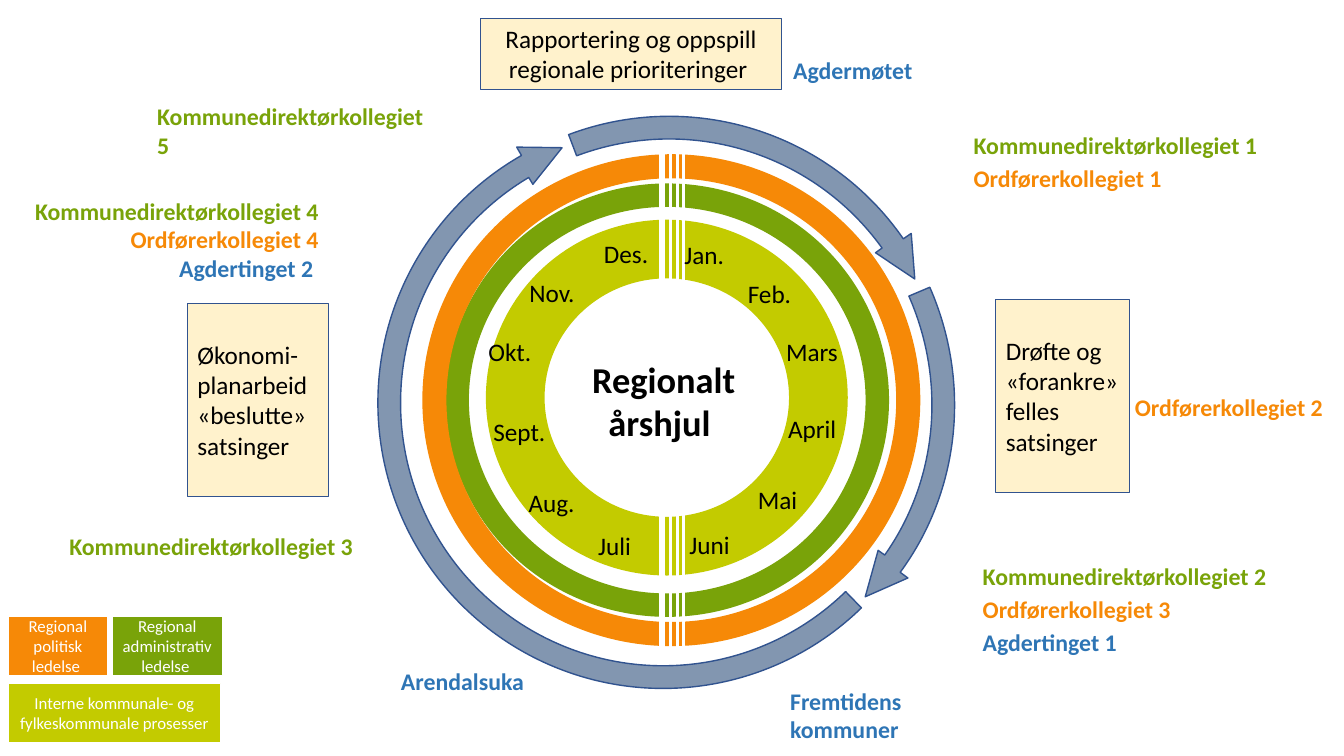
import math
import pptx
import pptx.dml.color
import pptx.enum.shapes
import pptx.enum.text
import pptx.util
import lxml.etree

COLS, ROWS = 133.33, 75
CELL = pptx.util.Inches(0.1)
LIME, GREEN, ORANGE, BLUE = "C3CB00", "79A309", "F68907", "2E75B5"
CREAM, STEEL, NAVY = "FFF2CC", "8296B0", "31538F"
WHITE, BLACK = "FFFFFF", "000000"
ALIGN = pptx.enum.text.PP_ALIGN
LEFT, MID, RIGHT = ALIGN.LEFT, ALIGN.CENTER, ALIGN.RIGHT
KIND = pptx.enum.shapes.MSO_SHAPE


def cells(*sizes):
    return [pptx.util.Emu(round(size * CELL)) for size in sizes]


def hue(code):
    return pptx.dml.color.RGBColor.from_string(code)


def paint(shape, fill, line=None, width=1):
    shape.shadow.inherit = False
    shape.fill.solid()
    shape.fill.fore_color.rgb = hue(fill)
    if line:
        shape.line.color.rgb = hue(line)
        shape.line.width = pptx.util.Pt(width)
    else:
        shape.line.fill.background()


def write(shape, lines, size, align=LEFT, bold=False, space=None, pads=(1, 0.5, 1, 0.5)):
    frame = shape.text_frame
    frame.word_wrap = True
    frame.vertical_anchor = pptx.enum.text.MSO_ANCHOR.TOP
    frame.margin_left, frame.margin_top, frame.margin_right, frame.margin_bottom = cells(*pads)
    frame.text = "\n".join(text for text, code in lines)
    for part, (text, code) in zip(frame.paragraphs, lines):
        part.alignment = align
        if space:
            part.line_spacing = space
        for run in part.runs:
            run.font.name = "Calibri"
            run.font.size = pptx.util.Pt(size)
            run.font.bold = bold
            run.font.color.rgb = hue(code)


def label(slide, place, lines, size, **style):
    write(slide.shapes.add_textbox(*cells(*place)), lines, size, **style)


def box(slide, place, text, fill, line, width, size, code, **style):
    shape = slide.shapes.add_shape(KIND.RECTANGLE, *cells(*place))
    paint(shape, fill, line, width)
    write(shape, [(text, code)], size, **style)
    return shape


def ring(slide, place, band, fill):
    shape = slide.shapes.add_shape(KIND.DONUT, *cells(*place))
    shape.adjustments[0] = band
    paint(shape, fill)


def stripe(slide, col, top, end):
    line = slide.shapes.add_connector(
        pptx.enum.shapes.MSO_CONNECTOR.STRAIGHT, *cells(col, top, col, end))
    line.line.color.rgb = hue(WHITE)
    line.line.width = pptx.util.Pt(2.5)
    lxml.etree.SubElement(line._element.spPr, pptx.oxml.ns.qn("a:effectLst"))


def draw(route, verb, *points):
    step = lxml.etree.SubElement(route, pptx.oxml.ns.qn("a:" + verb))
    for x, y in points:
        lxml.etree.SubElement(step, pptx.oxml.ns.qn("a:pt"), x=str(x), y=str(y))


def arrow(slide, place, turn, start, end, tip):
    left, top, wide, high = place

    def spot(depth, angle, pull=0):
        a = math.radians(angle - turn)
        x, y = math.cos(a) - pull * math.sin(a), math.sin(a) + pull * math.cos(a)
        return cells(wide / 2 + (wide / 2 - depth) * x, high / 2 + (high / 2 - depth) * y)

    def arc(route, depth, first, last):
        count = math.ceil(abs(last - first) / 90)
        step = (last - first) / count
        pull = 4 / 3 * math.tan(math.radians(step) / 4)
        for i in range(count):
            near, far = first + i * step, first + (i + 1) * step
            draw(route, "cubicBezTo", spot(depth, near, pull), spot(depth, far, -pull),
                 spot(depth, far))

    path = slide.shapes.build_freeform(*cells(left, top), scale=1.0)
    path.add_line_segments([cells(left + wide, top), cells(left + wide, top + high),
                            cells(left, top + high)])
    shape = path.convert_to_shape()
    route = shape._element.spPr.find(".//" + pptx.oxml.ns.qn("a:path"))
    for step in list(route):
        route.remove(step)
    draw(route, "moveTo", spot(0.95, start))
    arc(route, 0.95, start, end)
    for depth, angle in ((0, end), (2, tip), (4, end - 1), (3.2, end - 1)):
        draw(route, "lnTo", spot(depth, angle))
    arc(route, 3.2, end - 1, start)
    draw(route, "close")
    shape.rotation = turn
    paint(shape, STEEL, NAVY)


def wheel(slide):
    ring(slide, (48.2, 21.8, 35.9, 35.3), 0.165, LIME)
    ring(slide, (44.2, 18.2, 44, 43), 0.054, GREEN)
    ring(slide, (41.9, 15.3, 49.4, 48.8), 0.049, ORANGE)
    for col, top, end in ((66.5, 0, 74.3), (65.6, 0, ROWS), (65.8, 0, 74.3),
                          (67.8, 2.4, ROWS), (67.2, 0.3, ROWS)):
        stripe(slide, col, top, end)
    for name, col, row, wide in (
        ("Jan.", 66.9, 23.3, 8.9), ("Feb.", 73.2, 27.1, 10.8), ("Mars", 77, 32.9, 8),
        ("April", 77.2, 40.5, 7.9), ("Mai", 74.2, 47.6, 6.5), ("Juni", 67.4, 52, 7.2),
    ):
        label(slide, (col, row, wide, 4), [(name, BLACK)], 18)
    for name, col, row, wide in (
        ("Juli", 56.1, 52.1, 8.6), ("Aug.", 50.7, 47.9, 8.4), ("Sept.", 48.7, 40.8, 7.5),
        ("Okt.", 47.3, 32.9, 7.5), ("Nov.", 51.1, 27, 8), ("Des.", 57, 23.2, 9.4),
    ):
        label(slide, (col, row, wide, 4), [(name, BLACK)], 18, align=RIGHT,
              pads=(0, 0.5, 2.1, 0.5))
    label(slide, (57.5, 34.9, 16.7, 11.1), [("Regionalt årshjul ", BLACK)], 26,
          align=MID, bold=True)
    arrow(slide, (36.5, 10.8, 58.5, 58.4), 248.8, 45.8, 240.3, 248.5)
    arrow(slide, (37.1, 10.6, 58.5, 58.4), 334, 249.4, 325.3, 333.6)
    arrow(slide, (35.9, 10.1, 60.2, 58.4), 45.4, -23, 36.6, 45.1)


def goals(slide):
    for place, text, align, top in (
        ((47.7, 1.8, 29.8, 7.1), "Rapportering og oppspill regionale prioriteringer ", MID, 0.5),
        ((98.8, 29.7, 13.3, 19.2), "Drøfte og «forankre» felles satsinger", LEFT, 3.55),
        ((18.6, 30.1, 14, 19.2), "Økonomi- planarbeid «beslutte»\vsatsinger", LEFT, 3.55),
    ):
        box(slide, place, text, CREAM, NAVY, 0.75, 18, BLACK,
            align=align, pads=(1, top, 1, 0.5))


def legend(slide):
    for place, text, fill, side in (
        ((0.8, 61.1, 9.9, 5.9), "Regional politisk ledelse ", ORANGE, 1),
        ((11.1, 61.1, 11, 5.9), "Regional administrativ ledelse ", GREEN, 1),
        ((0.8, 67.8, 21.1, 5.9), "Interne kommunale- og fylkeskommunale prosesser", LIME, 0),
    ):
        shape = box(slide, place, text, fill, WHITE, 1, 12, WHITE,
                    align=MID, pads=(side, 0.5, side, 0.5))
        shape.text_frame.vertical_anchor = pptx.enum.text.MSO_ANCHOR.MIDDLE


def boards(slide):
    for place, lines, align, space in (
        ((95.6, 12.1, 31.2, 14.7),
         [("Kommunedirektørkollegiet 1", GREEN), ("Ordførerkollegiet 1", ORANGE)], LEFT, 1.15),
        ((96.5, 54.8, 32.8, 11.5),
         [("Kommunedirektørkollegiet 2", GREEN), ("Ordførerkollegiet 3", ORANGE),
          ("Agdertinget 1", BLUE)], LEFT, 1.15),
        ((2.2, 19, 30.4, 10.1),
         [("Kommunedirektørkollegiet 4", GREEN), ("Ordførerkollegiet 4", ORANGE),
          ("Agdertinget 2 ", BLUE)], RIGHT, None),
        ((77.7, 5, 14.8, 4), [("Agdermøtet", BLUE)], LEFT, None),
        ((14.6, 9.6, 30.1, 4), [("Kommunedirektørkollegiet 5", GREEN)], LEFT, None),
        ((5.6, 51.8, 30.4, 4.3), [("Kommunedirektørkollegiet 3", GREEN)], RIGHT, 1.15),
        ((38.8, 65.7, 16, 4), [("Arendalsuka", BLUE)], LEFT, None),
        ((111.6, 38, 21.2, 7.1), [("Ordførerkollegiet 2", ORANGE)], LEFT, 1.15),
        ((77.4, 67.6, 16, 7.1), [("Fremtidens", BLUE), ("kommuner", BLUE)], LEFT, None),
    ):
        label(slide, place, lines, 17, align=align, bold=True, space=space)


def main():
    deck = pptx.Presentation()
    deck.slide_width, deck.slide_height = cells(COLS, ROWS)
    slide = deck.slides.add_slide(deck.slide_layouts[6])
    wheel(slide)
    goals(slide)
    legend(slide)
    boards(slide)
    deck.save("out.pptx")


if __name__ == "__main__":
    main()
